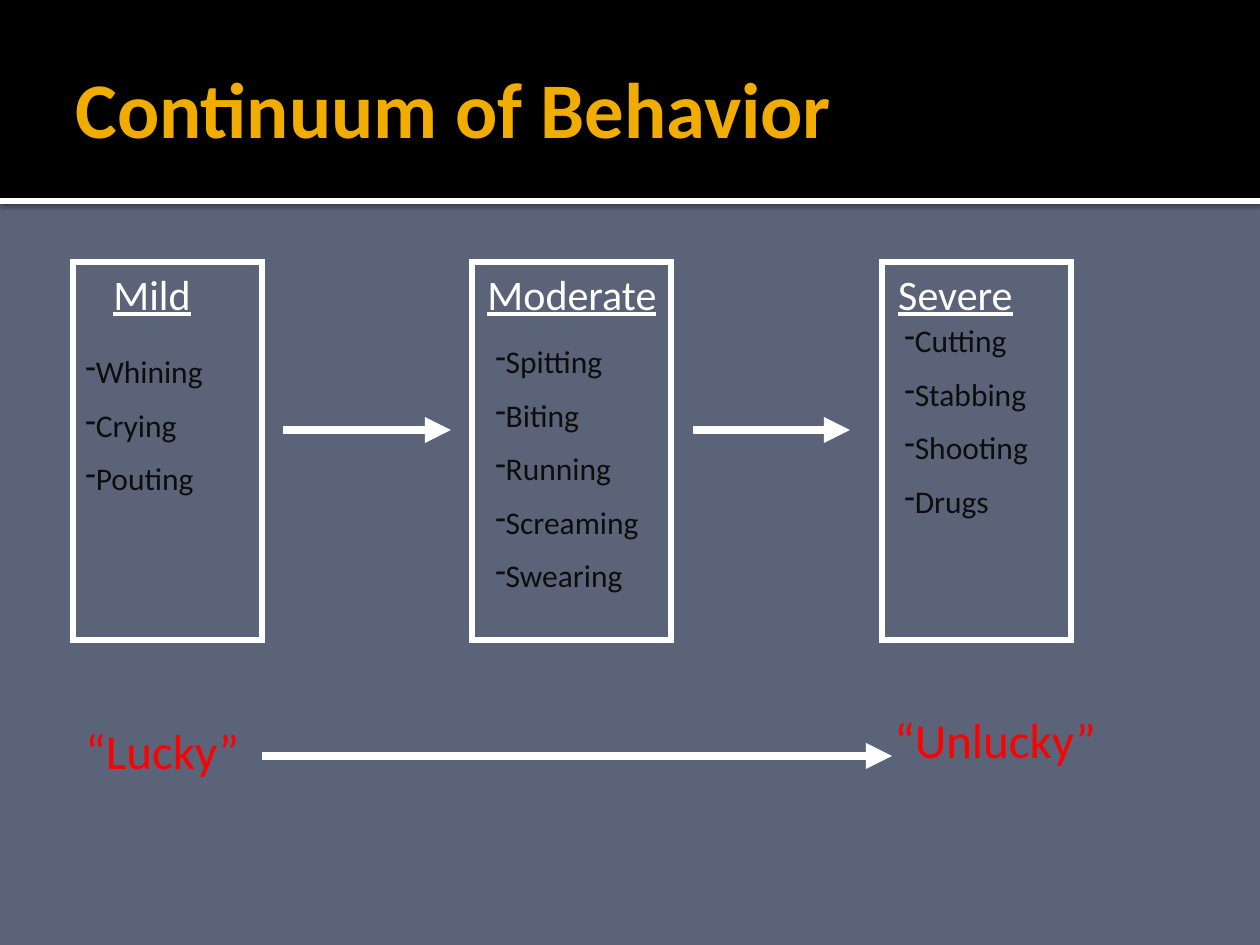
from lxml import etree
from pptx import Presentation
from pptx.dml.color import RGBColor
from pptx.enum.shapes import MSO_CONNECTOR, MSO_SHAPE
from pptx.enum.text import MSO_ANCHOR, PP_ALIGN
from pptx.oxml.ns import qn
from pptx.util import Emu, Pt

RECT = MSO_SHAPE.RECTANGLE
STRAIGHT = MSO_CONNECTOR.STRAIGHT
LEFT, CENTER = PP_ALIGN.LEFT, PP_ALIGN.CENTER
MIDDLE = MSO_ANCHOR.MIDDLE
PX = 914400 // 126
COLORS = {name: RGBColor.from_string(value) for name, value in {
    "background": "5A6378", "band": "000000", "white": "FFFFFF",
    "title": "F0AD00", "item": "0D0D0D", "luck": "FF0000"}.items()}

prs = Presentation()
prs.slide_width, prs.slide_height = Emu(1260 * PX), Emu(945 * PX)
slide = prs.slides.add_slide(prs.slide_layouts[6])
slide.background.fill.solid()
slide.background.fill.fore_color.rgb = COLORS["background"]


def add_rect(left, top, width, height):
    rect = slide.shapes.add_shape(RECT, *(Emu(v * PX) for v in (left, top, width, height)))
    rect.shadow.inherit = False
    return rect


def add_text(box, lines, size, color, align=LEFT, dashed=False):
    frame = slide.shapes.add_textbox(*(Emu(v * PX) for v in box)).text_frame
    frame.word_wrap = True
    frame.text = "\n".join(lines)
    for number, paragraph in enumerate(frame.paragraphs):
        paragraph.alignment = align
        paragraph.space_before = Pt(size / 2 if number else 0)
        font = paragraph.runs[0].font
        font.name, font.size = "Calibri", Pt(size)
        font.color.rgb = COLORS[color]
        if dashed:
            etree.SubElement(paragraph._p.get_or_add_pPr(), qn("a:buChar"), char="-")
    return frame


# Header band with a shadowed white rule under it
rule = add_rect(0, 198, 1260, 6)
band = add_rect(0, 0, 1260, 198)
for part, color in ((rule, "white"), (band, "band")):
    part.fill.solid()
    part.fill.fore_color.rgb = COLORS[color]
    part.line.fill.background()
effects = rule._element.spPr.find(qn("a:effectLst"))
shadow = etree.SubElement(effects, qn("a:outerShdw"), blurRad="31750", dist="10160",
                          dir="5400000", algn="tl", rotWithShape="0")
shade = etree.SubElement(shadow, qn("a:srgbClr"), val="000000")
etree.SubElement(shade, qn("a:alpha"), val="60000")

title = add_text((63, 21, 1134, 173), ["Continuum of Behavior"], 45, "title")
title.vertical_anchor = MIDDLE
title.paragraphs[0].runs[0].font.bold = True

# Severity levels: heading box, list box, frame left and width
levels = [
    ("Mild", (42, 262, 220, 63), (73, 346, 189, 222), 73, 189,
     ["Whining", "Crying", "Pouting"]),
    ("Moderate", (462, 262, 220, 63), (483, 336, 199, 335), 472, 199,
     ["Spitting", "Biting", "Running", "Screaming", "Swearing"]),
    ("Severe", (861, 262, 189, 63), (892, 315, 168, 335), 882, 189,
     ["Cutting", "Stabbing", "Shooting", "Drugs"]),
]
for level, heading_box, list_box, left, width, behaviors in levels:
    heading = add_text(heading_box, [level], 24, "white", CENTER)
    heading.paragraphs[0].runs[0].font.underline = True
    add_text(list_box, behaviors, 18, "item", dashed=True)
    frame = add_rect(left, 262, width, 378)
    frame.fill.background()
    frame.line.color.rgb = COLORS["white"]
    frame.line.width = Pt(3)
    etree.SubElement(frame.line._get_or_add_ln(), qn("a:miter"), lim="800000")

# Luck scale
add_text((73, 714, 231, 72), ["“Lucky”"], 28, "luck")
add_text((882, 703, 284, 72), ["“Unlucky”"], 28, "luck")

# Arrows between levels and along the luck scale
for start, end, y in ((283, 451, 430), (693, 850, 430), (262, 892, 756)):
    arrow = slide.shapes.add_connector(STRAIGHT, *(Emu(v * PX) for v in (start, y, end, y)))
    arrow.line.color.rgb = COLORS["white"]
    arrow.line.width = Pt(5)
    etree.SubElement(arrow.line._get_or_add_ln(), qn("a:tailEnd"), type="triangle")
    etree.SubElement(arrow._element.spPr, qn("a:effectLst"))

prs.save("out.pptx")
